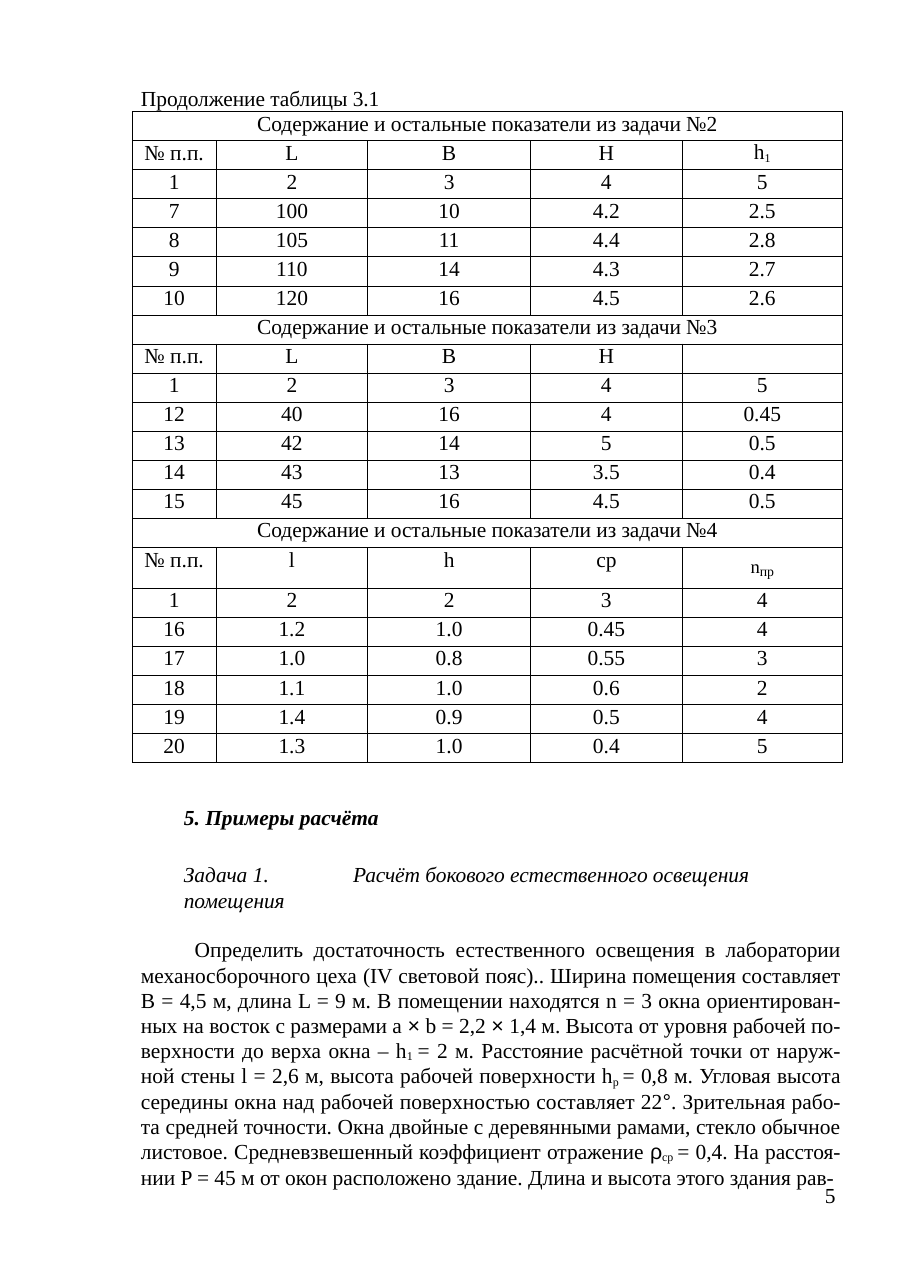
from dataclasses import dataclass

from lxml import etree
from pptx import Presentation
from pptx import util as u
from pptx.dml import color
from pptx.enum import text as t
from pptx.oxml import ns


@dataclass(frozen=True)
class Theme:
    """Colours, fonts and type sizes of the page."""
    ink: color.RGBColor = color.RGBColor(0, 0, 0)
    serif: str = "Times New Roman"
    sans: str = "Arial"
    size: float = 14
    sub_size: float = 13.5
    border: float = 0.5
    cell_line: float = 15.8
    heading_line: float = 17
    body_line: float = 16.5


THEME = Theme()
SUB = {"size": THEME.sub_size, "base": -12}
SANS = {"name": THEME.sans}
TIGHT = {"spacing": -0.05}
NO_MARGINS = {f"margin_{side}": 0 for side in ("left", "top", "right", "bottom")}

COLUMNS = (1.93, 3.5, 3.75, 3.5, 3.69)
ROW_HEIGHT, TALL_ROW_HEIGHT = 0.67, 0.94
NUMBER = "№ п.п."
HEIGHT_1 = [("h", {}), ("1", SUB)]
NORMATIVE = [("n", {"size": 21, "base": 8}), ("пр", {"size": 9})]
TASKS = {
    2: [(NUMBER, "L", "B", "H", HEIGHT_1),
        ("1", "2", "3", "4", "5"),
        ("7", "100", "10", "4.2", "2.5"),
        ("8", "105", "11", "4.4", "2.8"),
        ("9", "110", "14", "4.3", "2.7"),
        ("10", "120", "16", "4.5", "2.6")],
    3: [(NUMBER, "L", "B", "H", ""),
        ("1", "2", "3", "4", "5"),
        ("12", "40", "16", "4", "0.45"),
        ("13", "42", "14", "5", "0.5"),
        ("14", "43", "13", "3.5", "0.4"),
        ("15", "45", "16", "4.5", "0.5")],
    4: [(NUMBER, "l", "h", "ср", NORMATIVE),
        ("1", "2", "2", "3", "4"),
        ("16", "1.2", "1.0", "0.45", "4"),
        ("17", "1.0", "0.8", "0.55", "3"),
        ("18", "1.1", "1.0", "0.6", "2"),
        ("19", "1.4", "0.9", "0.5", "4"),
        ("20", "1.3", "1.0", "0.4", "5")],
}
TASK_TITLE = [
    ("Задача 1.", {}), (" ", {"spacing": 51.4}),
    ("Расчёт бокового естественного освещения помещения", TIGHT),
]
BODY = [
    ("Определить достаточность естественного освещения в лаборатории механосборочного "
     "цеха (IV световой пояс).. Ширина помещения составляет B = 4,5 м, длина L = 9 м. "
     "В помещении находятся n = 3 окна ориентирован- ных на восток с размерами a ", {}),
    ("×", SANS), (" b = 2,2 ", {}), ("×", SANS),
    (" 1,4 м. Высота от уровня рабочей по- верхности до верха окна – h", {}),
    ("1 ", SUB),
    ("= 2 м. Расстояние расчётной точки от наруж- ной стены l = 2,6 м, "
     "высота рабочей поверхности h", {}),
    ("р ", SUB),
    ("= 0,8 м. Угловая высота середины окна над рабочей поверхностью составляет 22", {}),
    ("°", SANS),
    (". Зрительная рабо- та средней точности. Окна двойные с деревянными рамами, стекло "
     "обычное листовое. Средневзвешенный коэффициент отражение ", {}),
    ("ρ", SANS), ("ср ", SUB),
    ("= 0,4. На расстоя- нии P = 45 м от окон расположено здание. "
     "Длина и высота этого здания рав-", {}),
]


def apply(target, values):
    """Set every attribute named in values on target."""
    for name, value in values.items():
        setattr(target, name, value)


def add_run(paragraph, content, style):
    """Add one run with the theme font, changed by style."""
    run = paragraph.add_run()
    run.text = content
    values = {"name": THEME.serif, "size": THEME.size, **style}
    base = values.pop("base", None)
    spacing = values.pop("spacing", None)
    values["size"] = u.Pt(values["size"])
    apply(run.font, values)
    run.font.color.rgb = THEME.ink
    for name, value, scale in (("baseline", base, 1000), ("spc", spacing, 100)):
        if value is not None:
            run._r.get_or_add_rPr().set(name, str(round(value * scale)))


def fill_paragraph(paragraph, content, layout, style=None):
    """Write a string or a list of styled pieces into a paragraph."""
    apply(paragraph, layout)
    pieces = [(content, {})] if isinstance(content, str) else content
    for piece, own_style in pieces:
        if piece:
            add_run(paragraph, piece, {**(style or {}), **own_style})
    if not content:
        etree.SubElement(paragraph._p, ns.qn("a:endParaRPr"), sz=str(THEME.size * 100))


def indent(paragraph, left, first=0):
    """Indent a paragraph and its first line, in centimetres."""
    properties = paragraph._p.get_or_add_pPr()
    properties.set("marL", str(u.Cm(left)))
    properties.set("indent", str(u.Cm(first)))


def add_text_frame(slide, left, top, width, height):
    """Add a wrapping text box without margins and return its frame."""
    shape = slide.shapes.add_textbox(u.Cm(left), u.Cm(top), u.Cm(width), u.Cm(height))
    apply(shape.text_frame, {**NO_MARGINS, "word_wrap": True})
    return shape.text_frame


def add_borders(cell):
    """Draw thin lines on all four sides of a cell."""
    properties = cell._tc.get_or_add_tcPr()
    for position, side in enumerate("LRTB"):
        line = etree.Element(ns.qn(f"a:ln{side}"), w=str(u.Pt(THEME.border)))
        fill = etree.SubElement(line, ns.qn("a:solidFill"))
        etree.SubElement(fill, ns.qn("a:srgbClr"), val=str(THEME.ink))
        properties.insert(position, line)


def fill_cell(cell, content, style):
    """Write centred content into a bordered cell."""
    apply(cell, {**NO_MARGINS, "vertical_anchor": t.MSO_ANCHOR.TOP})
    cell.fill.background()
    add_borders(cell)
    layout = {"alignment": t.PP_ALIGN.CENTER}
    if content is not NORMATIVE:
        layout["line_spacing"] = u.Pt(THEME.cell_line)
    fill_paragraph(cell.text_frame.paragraphs[0], content, layout, style)


def add_indicator_table(slide, left, top):
    """Add the table of indicators, one titled section for each task."""
    rows = []
    for number, section in TASKS.items():
        title = f"Содержание и остальные показатели из задачи №{number}"
        rows += [(title, "", "", "", ""), *section]
    heights = [TALL_ROW_HEIGHT if NORMATIVE in row else ROW_HEIGHT for row in rows]
    table = slide.shapes.add_table(len(rows), len(COLUMNS), u.Cm(left), u.Cm(top),
                                   u.Cm(sum(COLUMNS)), u.Cm(sum(heights))).table
    apply(table, {"first_row": False, "horz_banding": False})
    for column, width in zip(table.columns, COLUMNS):
        column.width = u.Cm(width)
    for index, (row, height) in enumerate(zip(rows, heights)):
        table.rows[index].height = u.Cm(height)
        is_title = not any(row[1:])
        for position, content in enumerate(row):
            fill_cell(table.cell(index, position), content, TIGHT if is_title else {})
        if is_title:
            table.cell(index, 0).merge(table.cell(index, len(COLUMNS) - 1))


def add_examples(slide):
    """Add the section heading, the task title and the task text."""
    frame = add_text_frame(slide, 3.1, 18.54, 16.28, 8.33)
    heading = frame.paragraphs[0]
    heading_line = u.Pt(THEME.heading_line)
    fill_paragraph(heading, "5. Примеры расчёта", {"line_spacing": heading_line},
                   {"bold": True, "italic": True})
    indent(heading, 1.14)
    task = frame.add_paragraph()
    fill_paragraph(task, TASK_TITLE,
                   {"line_spacing": heading_line, "space_before": u.Pt(20.2)},
                   {"italic": True})
    indent(task, 1.14)
    body = frame.add_paragraph()
    fill_paragraph(body, BODY, {"alignment": t.PP_ALIGN.JUSTIFY,
                                "line_spacing": u.Pt(THEME.body_line),
                                "space_before": u.Pt(15.5)}, {"spacing": -0.03})
    indent(body, 0.15, 1.24)


def main():
    """Build the page and save it."""
    presentation = Presentation()
    apply(presentation, {"slide_width": u.Cm(20.98), "slide_height": u.Cm(29.69)})
    slide = presentation.slides.add_slide(presentation.slide_layouts[6])
    caption = add_text_frame(slide, 3.25, 1.96, 6, 0.62)
    fill_paragraph(caption.paragraphs[0], "Продолжение таблицы 3.1", {}, TIGHT)
    add_indicator_table(slide, 3.05, 2.57)
    add_examples(slide)
    page_number = add_text_frame(slide, 19.02, 27.26, 0.6, 0.6)
    fill_paragraph(page_number.paragraphs[0], "5", {"line_spacing": u.Pt(THEME.body_line)})
    presentation.save("out.pptx")


if __name__ == "__main__":
    main()
